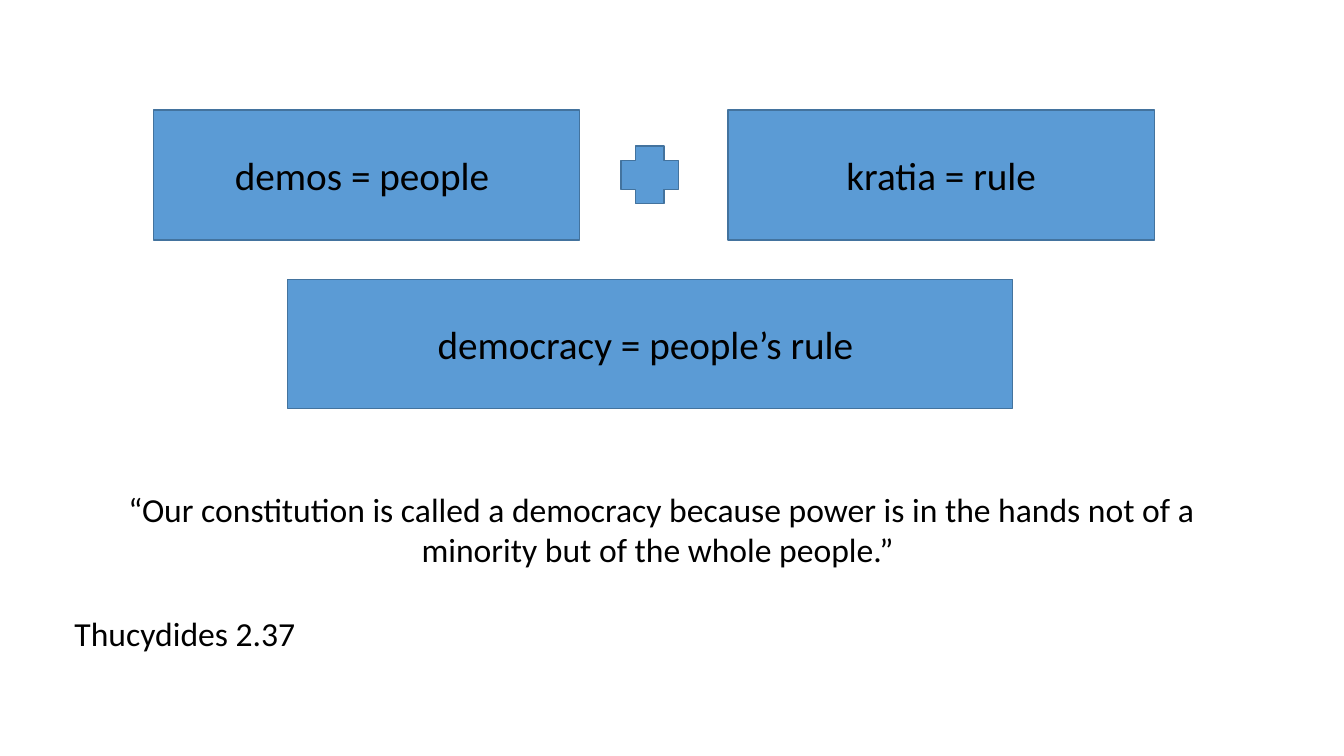
from pptx import Presentation
from pptx.dml.color import RGBColor
from pptx.enum.shapes import MSO_SHAPE
from pptx.enum.text import MSO_ANCHOR, PP_ALIGN
from pptx.util import Inches, Pt

RECTANGLE, PLUS = MSO_SHAPE.RECTANGLE, MSO_SHAPE.CROSS
LEFT, CENTER = PP_ALIGN.LEFT, PP_ALIGN.CENTER
MIDDLE = MSO_ANCHOR.MIDDLE


def color(hex_value):
    return RGBColor.from_string(hex_value)


class SlideBuilder:
    """Holds the style and the current slide."""

    fill, outline, ink = "5B9BD5", "43739E", "000000"
    font_name = "Calibri"

    def __init__(self, slide):
        self.slide = slide

    def set_text(self, text_frame, text, size, alignment):
        paragraph = text_frame.paragraphs[0]
        paragraph.alignment = alignment
        run = paragraph.add_run()
        run.text = text
        font_format = {"name": self.font_name, "size": Pt(size)}
        for attribute, value in font_format.items():
            setattr(run.font, attribute, value)
        run.font.color.rgb = color(self.ink)

    def text_box(self, box, text, alignment=LEFT, wrap=True):
        shape = self.slide.shapes.add_textbox(*map(Inches, box))
        shape.text_frame.word_wrap = wrap
        self.set_text(shape.text_frame, text, 24, alignment)

    def block(self, kind, box, text=None):
        shape = self.slide.shapes.add_shape(kind, *map(Inches, box))
        shape.shadow.inherit = False
        shape.fill.solid()
        shape.fill.fore_color.rgb = color(self.fill)
        shape.line.color.rgb = color(self.outline)
        shape.line.width = Pt(1)
        if text:
            shape.text_frame.vertical_anchor = MIDDLE
            self.set_text(shape.text_frame, text, 28, CENTER)


def main():
    presentation = Presentation()
    presentation.slide_width = Inches(13.33)
    presentation.slide_height = Inches(7.5)
    blank_layout = presentation.slide_layouts[6]
    builder = SlideBuilder(presentation.slides.add_slide(blank_layout))

    # Quotation and its source
    builder.text_box((0.64, 6.03, 2.41, 0.5), "Thucydides 2.37", wrap=False)
    builder.text_box(
        (0.57, 4.8, 11.98, 1.38),
        "“Our constitution is called a democracy because power is in the "
        "hands not of a minority but of the whole people.” ",
        CENTER,
    )

    # Word roots joined by a plus
    for left, meaning in ((1.52, "demos = people "), (7.22, "kratia = rule")):
        builder.block(RECTANGLE, (left, 1.09, 4.23, 1.29), meaning)
    builder.block(PLUS, (6.16, 1.45, 0.57, 0.57))

    # Combined meaning
    builder.block(RECTANGLE, (2.85, 2.77, 7.19, 1.28), "democracy = people’s rule ")

    presentation.save("out.pptx")


if __name__ == "__main__":
    main()
